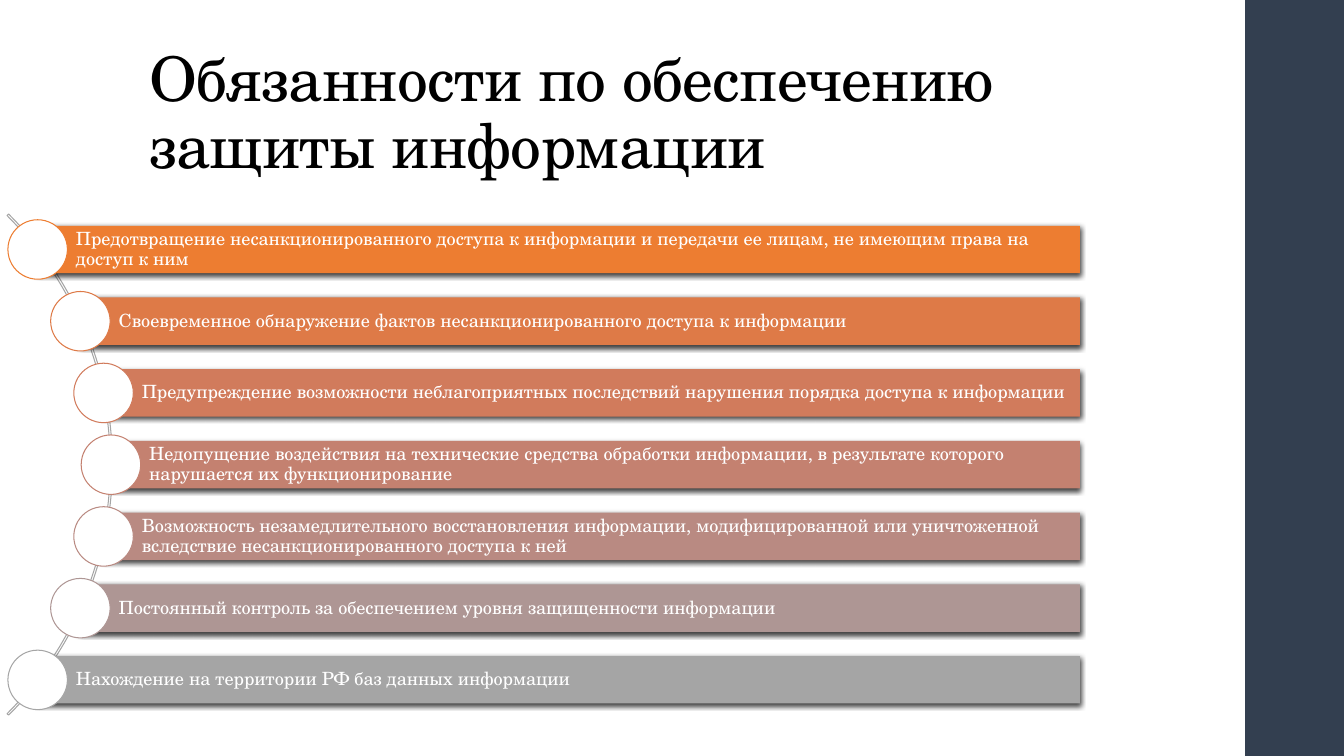
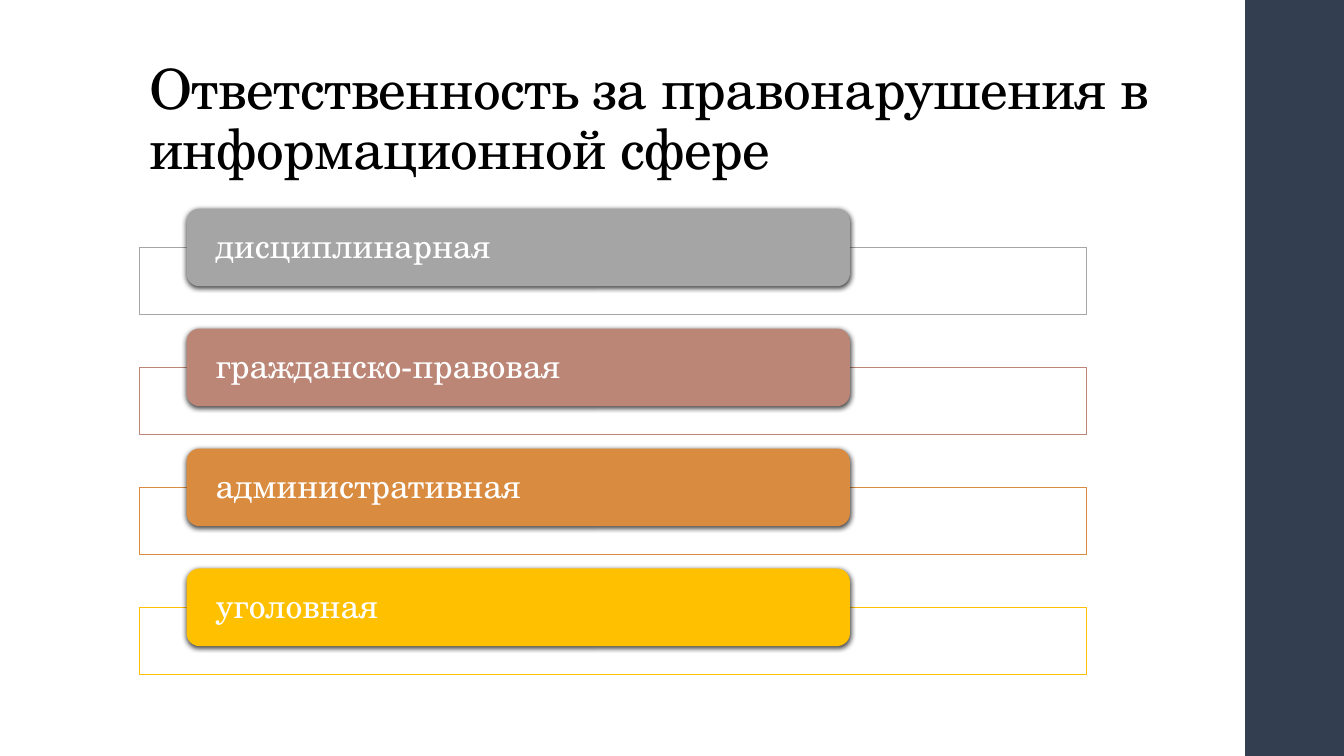
from dataclasses import dataclass
from math import sqrt

from lxml import etree
from pptx import Presentation
from pptx.dml.color import RGBColor
from pptx.enum.shapes import MSO_SHAPE
from pptx.enum.text import MSO_ANCHOR, MSO_AUTO_SIZE, PP_ALIGN
from pptx.oxml.ns import qn
from pptx.shapes.autoshape import Shape
from pptx.slide import Slide, SlideLayout
from pptx.text.text import TextFrame
from pptx.util import Inches, Pt

RECTANGLE = MSO_SHAPE.RECTANGLE
ROUNDED = MSO_SHAPE.ROUNDED_RECTANGLE
OVAL = MSO_SHAPE.OVAL
BLOCK_ARC = MSO_SHAPE.BLOCK_ARC
MIDDLE = MSO_ANCHOR.MIDDLE
BOTTOM = MSO_ANCHOR.BOTTOM
LEFT = PP_ALIGN.LEFT
NO_AUTOFIT = MSO_AUTO_SIZE.NONE
TITLE_ONLY = 5


@dataclass(frozen=True)
class Theme:
    font: str = "TeX Gyre Schola"
    title_color: str = "000000"
    label_color: str = "FFFFFF"
    paper: str = "FFFFFF"
    sidebar: str = "333F50"
    arc: str = "A5A5A5"
    duty_title_size: float = 44
    liability_title_size: float = 39.6
    duty_size: float = 13
    liability_size: float = 24
    line_width: float = 0.75
    line_spacing: float = 0.9


THEME = Theme()


@dataclass(frozen=True)
class Box:
    """Left, top, width and height in inches."""
    left: float
    top: float
    width: float
    height: float


@dataclass(frozen=True)
class Item:
    text: str
    color: str


DUTIES = [
    Item("Предотвращение несанкционированного доступа к информации и передачи ее лицам, "
         "не имеющим права на доступ к ним", "ED7D31"),
    Item("Своевременное обнаружение фактов несанкционированного доступа к информации", "DE7A47"),
    Item("Предупреждение возможности неблагоприятных последствий нарушения порядка доступа "
         "к информации", "D17B5C"),
    Item("Недопущение воздействия на технические средства обработки информации, "
         "в результате которого нарушается их функционирование", "C48170"),
    Item("Возможность незамедлительного восстановления информации, модифицированной "
         "или уничтоженной вследствие несанкционированного доступа к ней", "B98A82"),
    Item("Постоянный контроль за обеспечением уровня защищенности информации", "AE9694"),
    Item("Нахождение на территории РФ баз данных информации", "A5A5A5"),
]

LIABILITIES = [
    Item("дисциплинарная", "A5A5A5"),
    Item("гражданско-правовая", "BB8676"),
    Item("административная", "D98B3F"),
    Item("уголовная", "FFC000"),
]

TITLE_BOX = Box(1.38, 0.4, 10.6, 1.45)
SIDEBAR_BOX = Box(12.35, 0, 1, 7.5)

ARC_CENTER_X, ARC_CENTER_Y = -2.4, 4.61
ARC_DIAMETER = 7.03
ARC_ADJUSTMENTS = (189, 27, 0.003)
CIRCLE_TRACK_RADIUS = 3.5
CIRCLE_SIZE = 0.59
FIRST_BAR_TOP, LAST_BAR_TOP = 2.24, 6.51
BAR_RIGHT, BAR_HEIGHT = 10.71, 0.47
BAR_INSETS = (0.38, 0.04, 0.04, 0.04)

FIRST_FRAME = Box(1.38, 2.46, 9.4, 0.66)
FIRST_LABEL = Box(1.85, 2.07, 6.58, 0.77)
LIABILITY_PITCH = 1.19
LABEL_INSETS = (0.25, 0, 0.25, 0)


def add_shape(slide: Slide, kind: MSO_SHAPE, box: Box,
              fill: str | None = None, line: str | None = None) -> Shape:
    shape = slide.shapes.add_shape(
        kind, Inches(box.left), Inches(box.top), Inches(box.width), Inches(box.height))
    shape.shadow.inherit = False
    if fill:
        shape.fill.solid()
        shape.fill.fore_color.rgb = RGBColor.from_string(fill)
    else:
        shape.fill.background()
    if line:
        shape.line.color.rgb = RGBColor.from_string(line)
        shape.line.width = Pt(THEME.line_width)
    else:
        shape.line.fill.background()
    return shape


def add_drop_shadow(shape: Shape) -> None:
    effects = shape.element.spPr.find(qn("a:effectLst"))
    shadow = etree.SubElement(effects, qn("a:outerShdw"), {
        "blurRad": str(Pt(4)), "dist": str(Pt(1.2)), "dir": "5400000",
        "algn": "ctr", "rotWithShape": "0"})
    color = etree.SubElement(shadow, qn("a:srgbClr"), {"val": "000000"})
    etree.SubElement(color, qn("a:alpha"), {"val": "75000"})


def write_text(frame: TextFrame, text: str, size: float, color: str, anchor: MSO_ANCHOR) -> None:
    frame_format = {"word_wrap": True, "auto_size": NO_AUTOFIT, "vertical_anchor": anchor}
    for name, value in frame_format.items():
        setattr(frame, name, value)
    paragraph = frame.paragraphs[0]
    paragraph.alignment = LEFT
    paragraph.line_spacing = THEME.line_spacing
    run = paragraph.add_run()
    run.text = text
    for name, value in {"name": THEME.font, "size": Pt(size)}.items():
        setattr(run.font, name, value)
    run.font.color.rgb = RGBColor.from_string(color)


def add_label(slide: Slide, kind: MSO_SHAPE, box: Box, item: Item,
              size: float, insets: tuple[float, ...]) -> None:
    """Draw a filled, shadowed shape that holds the item's text."""
    shape = add_shape(slide, kind, box, fill=item.color)
    add_drop_shadow(shape)
    frame = shape.text_frame
    for side, inset in zip(("left", "top", "right", "bottom"), insets):
        setattr(frame, f"margin_{side}", Inches(inset))
    write_text(frame, item.text, size, THEME.label_color, MIDDLE)


def prepare_layout(layout: SlideLayout, slide: Slide) -> None:
    """Place the shared title and move a sidebar, drawn on the slide, to the layout."""
    title = next(shape for shape in layout.placeholders if shape.placeholder_format.idx == 0)
    for name in ("left", "top", "width", "height"):
        setattr(title, name, Inches(getattr(TITLE_BOX, name)))
    sidebar = add_shape(slide, RECTANGLE, SIDEBAR_BOX, fill=THEME.sidebar)
    layout.shapes.element.insert(2, sidebar.element)


def write_title(slide: Slide, text: str, size: float) -> None:
    title = slide.shapes.title
    write_text(title.text_frame, text, size, THEME.title_color, BOTTOM)
    for properties in title.element.iter(qn("a:rPr")):
        properties.set("spc", "-50")


def fill_duties(slide: Slide) -> None:
    write_title(slide, "Обязанности по обеспечению защиты информации", THEME.duty_title_size)
    radius = ARC_DIAMETER / 2
    arc_box = Box(ARC_CENTER_X - radius, ARC_CENTER_Y - radius, ARC_DIAMETER, ARC_DIAMETER)
    arc = add_shape(slide, BLOCK_ARC, arc_box, line=THEME.arc)
    for index, value in enumerate(ARC_ADJUSTMENTS):
        arc.adjustments[index] = value

    pitch = (LAST_BAR_TOP - FIRST_BAR_TOP) / (len(DUTIES) - 1)
    for index, duty in enumerate(DUTIES):
        top = FIRST_BAR_TOP + index * pitch
        center_y = top + BAR_HEIGHT / 2
        left = ARC_CENTER_X + sqrt(CIRCLE_TRACK_RADIUS ** 2 - (center_y - ARC_CENTER_Y) ** 2)
        bar = Box(left, top, BAR_RIGHT - left, BAR_HEIGHT)
        add_label(slide, RECTANGLE, bar, duty, THEME.duty_size, BAR_INSETS)
        circle = Box(left - CIRCLE_SIZE / 2, center_y - CIRCLE_SIZE / 2, CIRCLE_SIZE, CIRCLE_SIZE)
        add_shape(slide, OVAL, circle, fill=THEME.paper, line=duty.color)


def fill_liabilities(slide: Slide) -> None:
    write_title(slide, "Ответственность за правонарушения в информационной сфере",
                THEME.liability_title_size)
    for index, liability in enumerate(LIABILITIES):
        frame, label = (
            Box(first.left, first.top + index * LIABILITY_PITCH, first.width, first.height)
            for first in (FIRST_FRAME, FIRST_LABEL))
        add_shape(slide, RECTANGLE, frame, fill=THEME.paper, line=liability.color)
        add_label(slide, ROUNDED, label, liability, THEME.liability_size, LABEL_INSETS)


def main() -> None:
    presentation = Presentation()
    presentation.slide_width = Inches(13.33)
    presentation.slide_height = Inches(7.5)
    layout = presentation.slide_layouts[TITLE_ONLY]
    duties = presentation.slides.add_slide(layout)
    liabilities = presentation.slides.add_slide(layout)
    prepare_layout(layout, duties)
    fill_duties(duties)
    fill_liabilities(liabilities)
    presentation.save("out.pptx")


if __name__ == "__main__":
    main()
